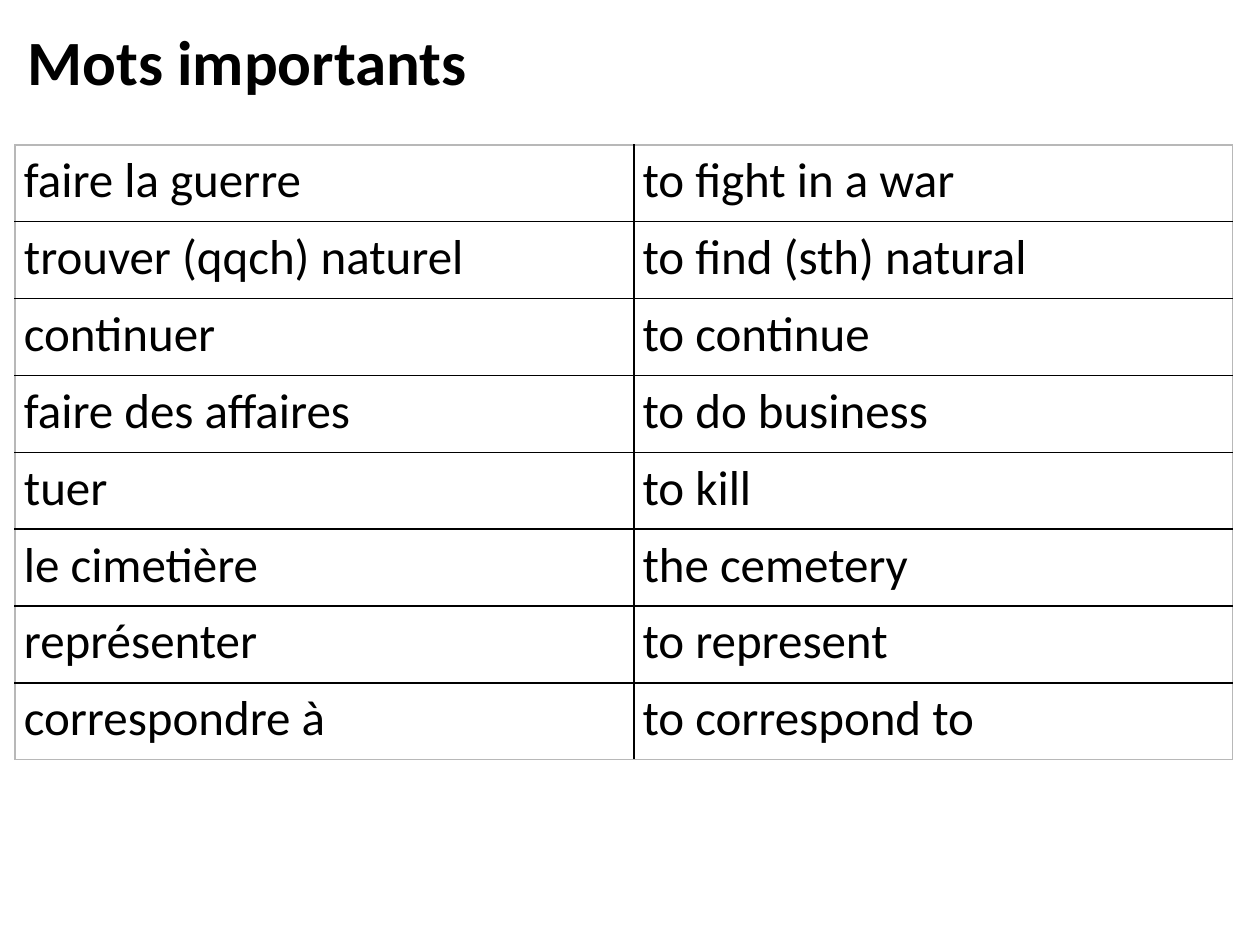
"""Build a French-English vocabulary slide with a title and a two-column table."""
from lxml import etree
from pptx import Presentation
from pptx.dml.color import RGBColor
from pptx.enum import text
from pptx.oxml import ns
from pptx.util import Inches, Pt

BLACK = RGBColor(0x00, 0x00, 0x00)
GREY = RGBColor(0xB8, 0xB8, 0xB8)
WHITE = RGBColor(0xFF, 0xFF, 0xFF)

WORDS = [
    ("faire la guerre", "to fight in a war"),
    ("trouver (qqch) naturel", "to find (sth) natural"),
    ("continuer", "to continue"),
    ("faire des affaires", "to do business"),
    ("tuer", "to kill"),
    ("le cimetière", "the cemetery"),
    ("représenter", "to represent"),
    ("correspondre à", "to correspond to"),
]
COLS = [4.91, 4.75]
ROW_H = 0.61
LEFT = 0.12
MARGINS = {
    "margin_left": Inches(0.07),
    "margin_right": Inches(0.07),
    "margin_top": Inches(0.05),
    "margin_bottom": Inches(0.05),
}
TITLE_FONT = {"name": "Calibri", "size": Pt(36), "bold": True}
CELL_FONT = {"name": "Calibri", "size": Pt(28), "bold": False}


def add_run(p, words, font):
    r = p.add_run()
    r.text = words
    for key, value in font.items():
        setattr(r.font, key, value)
    r.font.color.rgb = BLACK


def add_border(tc_pr, index, side, color):
    ln = etree.Element(ns.qn(f"a:ln{side}"), w=str(Pt(1)))
    fill = etree.SubElement(ln, ns.qn("a:solidFill"))
    etree.SubElement(fill, ns.qn("a:srgbClr"), val=str(color))
    tc_pr.insert(index, ln)


prs = Presentation()
prs.slide_width, prs.slide_height = Inches(10), Inches(7.5)
s = prs.slides.add_slide(prs.slide_layouts[6])

sp = s.shapes.add_table(
    len(WORDS), len(COLS), Inches(LEFT), Inches(1.15),
    Inches(sum(COLS)), Inches(ROW_H * len(WORDS)),
)
tbl = sp.table
tbl.first_row = tbl.horz_banding = False
for col, width in zip(tbl.columns, COLS):
    col.width = Inches(width)

for i, pair in enumerate(WORDS):
    tbl.rows[i].height = Inches(ROW_H)
    for j, words in enumerate(pair):
        cell = tbl.cell(i, j)
        for key, value in MARGINS.items():
            setattr(cell, key, value)
        add_run(cell.text_frame.paragraphs[0], words, CELL_FONT)
        cell.fill.solid()
        cell.fill.fore_color.rgb = WHITE
        outer = {
            "L": j == 0,
            "R": j == len(COLS) - 1,
            "T": i == 0,
            "B": i == len(WORDS) - 1,
        }
        for k, (side, is_outer) in enumerate(outer.items()):
            add_border(cell._tc.tcPr, k, side, GREY if is_outer else BLACK)

sp = s.shapes.add_textbox(Inches(LEFT), Inches(0.13), Inches(3.73), Inches(0.71))
tf = sp.text_frame
tf.word_wrap = False
tf.auto_size = text.MSO_AUTO_SIZE.SHAPE_TO_FIT_TEXT
add_run(tf.paragraphs[0], "Mots importants", TITLE_FONT)

prs.save("out.pptx")
